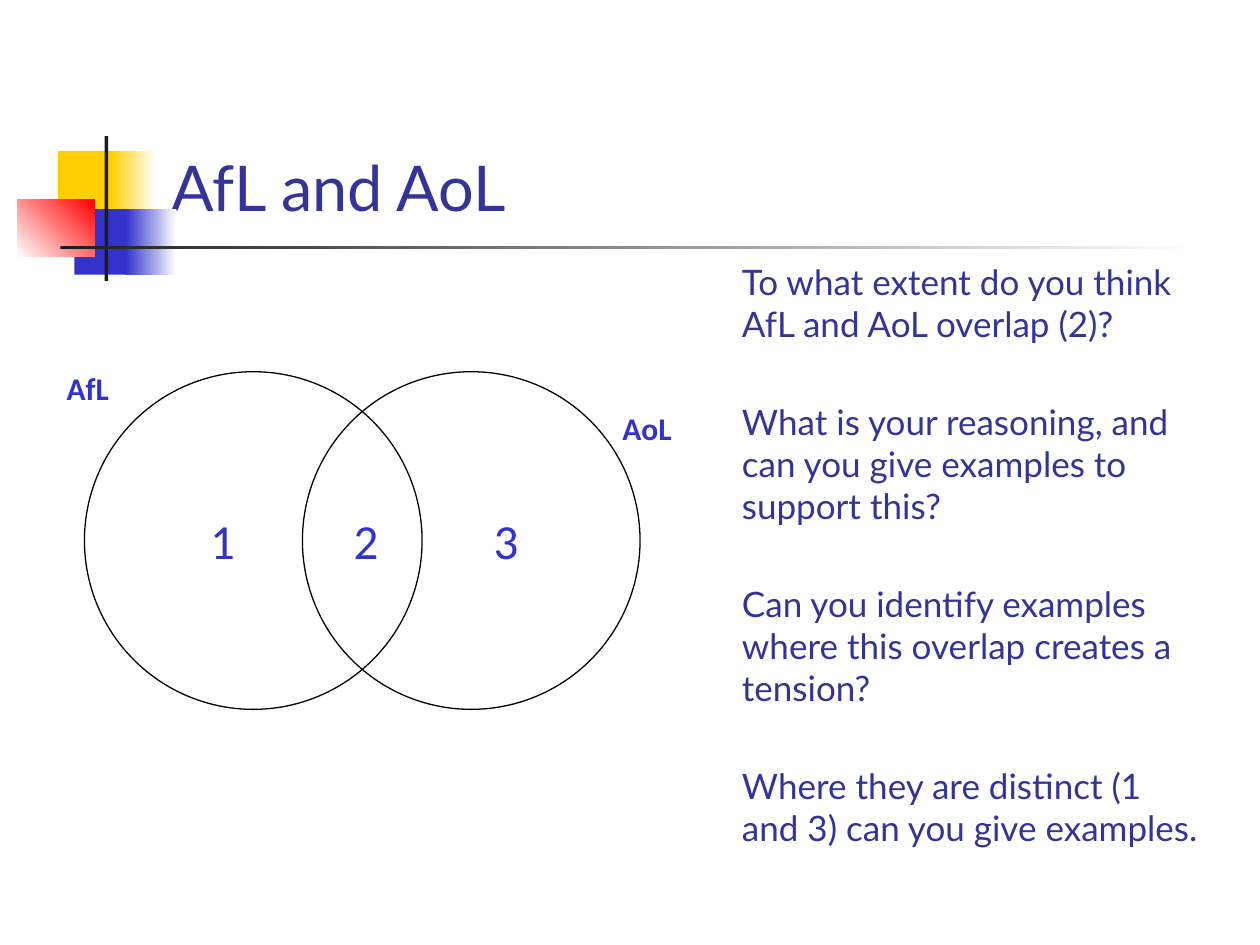
from dataclasses import dataclass
from pptx import Presentation
from pptx.dml.color import RGBColor
from pptx.enum.shapes import MSO_SHAPE as Kind
from pptx.enum.text import MSO_ANCHOR as Anchor, PP_ALIGN as Align
from pptx.util import Emu, Pt

SCALE = 9144
NAVY, BLUE, GOLD = "333399", "3333CC", "FFCF01"
RED, DARK, WHITE = "FF0000", "1C1C1C", "FFFFFF"


@dataclass
class Box:
    x: int
    y: int
    w: int
    h: int


@dataclass
class Block:
    box: Box
    fill: str
    fade: str = ""
    angle: int = 0


@dataclass
class Label:
    text: str
    box: Box


BLOCKS = [
    Block(Box(46, 120, 48, 52), GOLD),
    Block(Box(88, 120, 36, 52), GOLD, WHITE),
    Block(Box(59, 166, 46, 52), BLUE),
    Block(Box(100, 166, 40, 52), BLUE, WHITE),
    Block(Box(14, 158, 61, 46), WHITE, RED, 45),
    Block(Box(83, 108, 3, 115), DARK),
    Block(Box(48, 195, 900, 3), DARK, WHITE),
]
CIRCLES = [Box(x, 295, 268, 268) for x in (67, 240)]
NAMES = [Label("AfL", Box(43, 288, 57, 40)), Label("AoL", Box(484, 320, 62, 40))]
ZONES = [Label(text, Box(x, 400, 55, 57))
         for text, x in (("1", 149), ("2", 263), ("3", 374))]
ASKS = [
    "To what extent do you think AfL and AoL overlap (2)?",
    "What is your reasoning, and can you give examples to support this?",
    "Can you identify examples where this overlap creates a tension?",
    "Where they are distinct (1 and 3) can you give examples.",
]


def px(n: int) -> Emu:
    return Emu(n * SCALE)


def rgb(code: str) -> RGBColor:
    return RGBColor.from_string(code)


def place(box: Box) -> tuple:
    return px(box.x), px(box.y), px(box.w), px(box.h)


def write(frame, *lines: str, size: int, font: str = "Lato", color: str = NAVY,
          bold: bool = False, align=Align.LEFT, wrap: bool = True,
          anchor=Anchor.TOP, gap: int = 0) -> None:
    frame.word_wrap = wrap
    frame.vertical_anchor = anchor
    for i, line in enumerate(lines):
        para = frame.add_paragraph() if i else frame.paragraphs[0]
        para.alignment = align
        para.space_before = Pt(gap if i else 0)
        run = para.add_run()
        run.text = line
        run.font.name, run.font.size, run.font.bold = font, Pt(size), bold
        run.font.color.rgb = rgb(color)


def add_text(slide, box: Box, *lines: str, **form) -> None:
    write(slide.shapes.add_textbox(*place(box)).text_frame, *lines, **form)


def add_block(slide, block: Block) -> None:
    shape = slide.shapes.add_shape(Kind.RECTANGLE, *place(block.box))
    shape.shadow.inherit = False
    shape.line.fill.background()
    if block.fade:
        shape.fill.gradient()
        shape.fill.gradient_angle = block.angle
        for stop, code in zip(shape.fill.gradient_stops, (block.fill, block.fade)):
            stop.color.rgb = rgb(code)
    else:
        shape.fill.solid()
        shape.fill.fore_color.rgb = rgb(block.fill)


def add_circle(slide, box: Box) -> None:
    shape = slide.shapes.add_shape(Kind.OVAL, *place(box))
    shape.shadow.inherit = False
    shape.fill.background()
    shape.line.color.rgb = rgb("000000")
    shape.line.width = Pt(0.75)


def main() -> None:
    deck = Presentation()
    deck.slide_width, deck.slide_height = px(1000), px(750)
    slide = deck.slides.add_slide(deck.slide_layouts[5])
    for block in BLOCKS:
        add_block(slide, block)
    title = slide.shapes.title
    title.left, title.top, title.width, title.height = place(Box(126, 23, 852, 160))
    write(title.text_frame, "AfL and AoL", size=36, anchor=Anchor.BOTTOM)
    add_text(slide, Box(579, 202, 385, 583), *ASKS, size=20, gap=32)
    for box in CIRCLES:
        add_circle(slide, box)
    for name in NAMES:
        add_text(slide, name.box, name.text, size=18, font="Calibri",
                 color=BLUE, bold=True, wrap=False)
    for zone in ZONES:
        add_text(slide, zone.box, zone.text, size=28, font="Calibri",
                 color=BLUE, align=Align.CENTER)
    deck.save("out.pptx")


if __name__ == "__main__":
    main()
